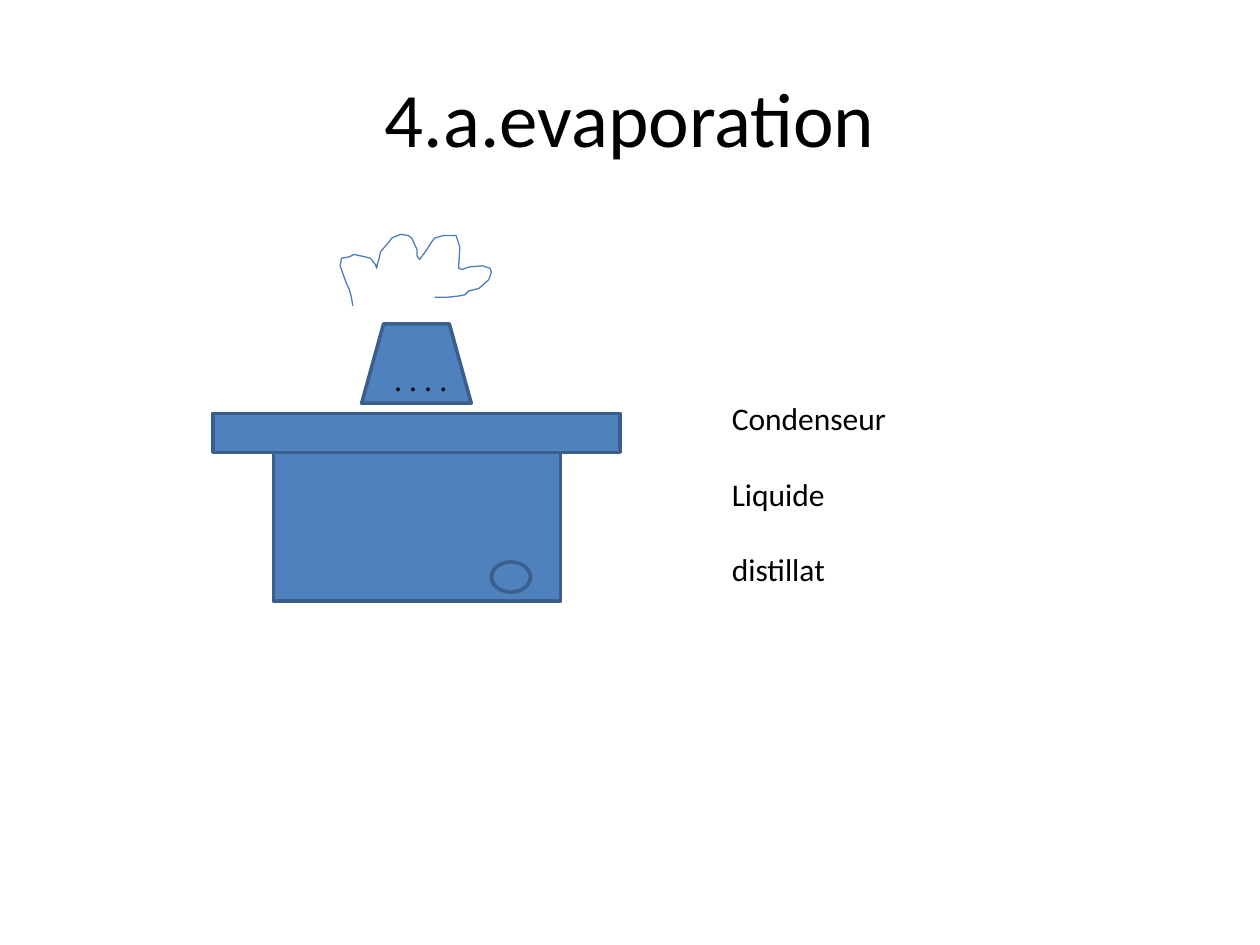
from pptx import Presentation
from pptx.dml.color import RGBColor
from pptx.enum.shapes import MSO_SHAPE as Shape
from pptx.enum.text import MSO_ANCHOR as Anchor, PP_ALIGN as Align
from pptx.util import Inches, Pt

BLACK = RGBColor(0x00, 0x00, 0x00)
BLUE = RGBColor(0x4F, 0x81, 0xBD)
DARK_BLUE = RGBColor(0x3A, 0x5F, 0x8C)
STEAM_BLUE = RGBColor(0x4B, 0x7E, 0xBC)

STEAM = [
    (2.8, 2.43), (2.79, 2.36), (2.77, 2.29), (2.75, 2.25), (2.71, 2.14),
    (2.7, 2.11), (2.71, 2.05), (2.77, 2.04), (2.81, 2.02), (2.9, 2.04),
    (2.94, 2.05), (2.98, 2.1), (2.99, 2.13), (3, 2.08), (3.01, 2.05),
    (3.02, 2), (3.08, 1.93), (3.11, 1.89), (3.18, 1.86), (3.24, 1.87),
    (3.27, 1.89), (3.29, 1.94), (3.31, 1.98), (3.31, 2.03), (3.33, 2.06),
    (3.39, 1.98), (3.42, 1.93), (3.45, 1.89), (3.52, 1.87), (3.62, 1.87),
    (3.64, 1.93), (3.65, 1.96), (3.64, 2.13), (3.67, 2.14), (3.72, 2.12),
    (3.83, 2.11), (3.89, 2.13), (3.9, 2.16), (3.88, 2.22), (3.8, 2.29),
    (3.72, 2.31), (3.69, 2.34), (3.64, 2.35), (3.55, 2.36), (3.45, 2.36),
]


class SlideBuilder:
    def __init__(self, page, font="Calibri"):
        self.page = page
        self.font = font

    def text(self, bounds, lines, size=18, align=Align.LEFT, anchor=Anchor.TOP, gap=0):
        box = self.page.shapes.add_textbox(*map(Inches, bounds))
        frame = box.text_frame
        frame.word_wrap = True
        frame.vertical_anchor = anchor
        frame.text = "\n".join(lines)
        for index, para in enumerate(frame.paragraphs):
            para.alignment = align
            para.font.name = self.font
            para.font.size = Pt(size)
            para.font.color.rgb = BLACK
            if index and gap:
                para.space_before = Pt(gap)

    def solid(self, kind, bounds, rotation=0):
        shape = self.page.shapes.add_shape(kind, *map(Inches, bounds))
        shape.rotation = rotation
        shape.shadow.inherit = False
        shape.fill.solid()
        shape.fill.fore_color.rgb = BLUE
        shape.line.color.rgb = DARK_BLUE
        shape.line.width = Pt(2)

    def outline(self, points):
        """Draw an open, unfilled line through the points."""
        start, *rest = [(Inches(x), Inches(y)) for x, y in points]
        builder = self.page.shapes.build_freeform(*start)
        builder.add_line_segments(rest, close=False)
        shape = builder.convert_to_shape()
        shape.shadow.inherit = False
        shape.fill.background()
        shape.line.color.rgb = STEAM_BLUE
        shape.line.width = Pt(0.75)


def main():
    deck = Presentation()
    deck.slide_width, deck.slide_height = Inches(10), Inches(7.5)
    slide = SlideBuilder(deck.slides.add_slide(deck.slide_layouts[6]))

    slide.text((0.5, 0.3, 9, 1.25), ["4.a.evaporation"], 44, Align.CENTER, Anchor.MIDDLE)
    slide.solid(Shape.RECTANGLE, (2.17, 3.51, 2.28, 1.26))
    slide.solid(Shape.RECTANGLE, (1.69, 3.28, 3.23, 0.31))
    slide.solid(Shape.OVAL, (3.9, 4.46, 0.31, 0.24))
    slide.solid(Shape.FLOWCHART_MANUAL_OPERATION, (2.87, 2.57, 0.87, 0.63), 180)
    slide.outline(STEAM)
    slide.text((3.03, 2.81, 0.63, 0.4), [". . . ."])
    slide.text((5.71, 3.12, 3.54, 1.62), ["Condenseur", "Liquide", "distillat"], gap=21.5)

    deck.save("out.pptx")


if __name__ == "__main__":
    main()
